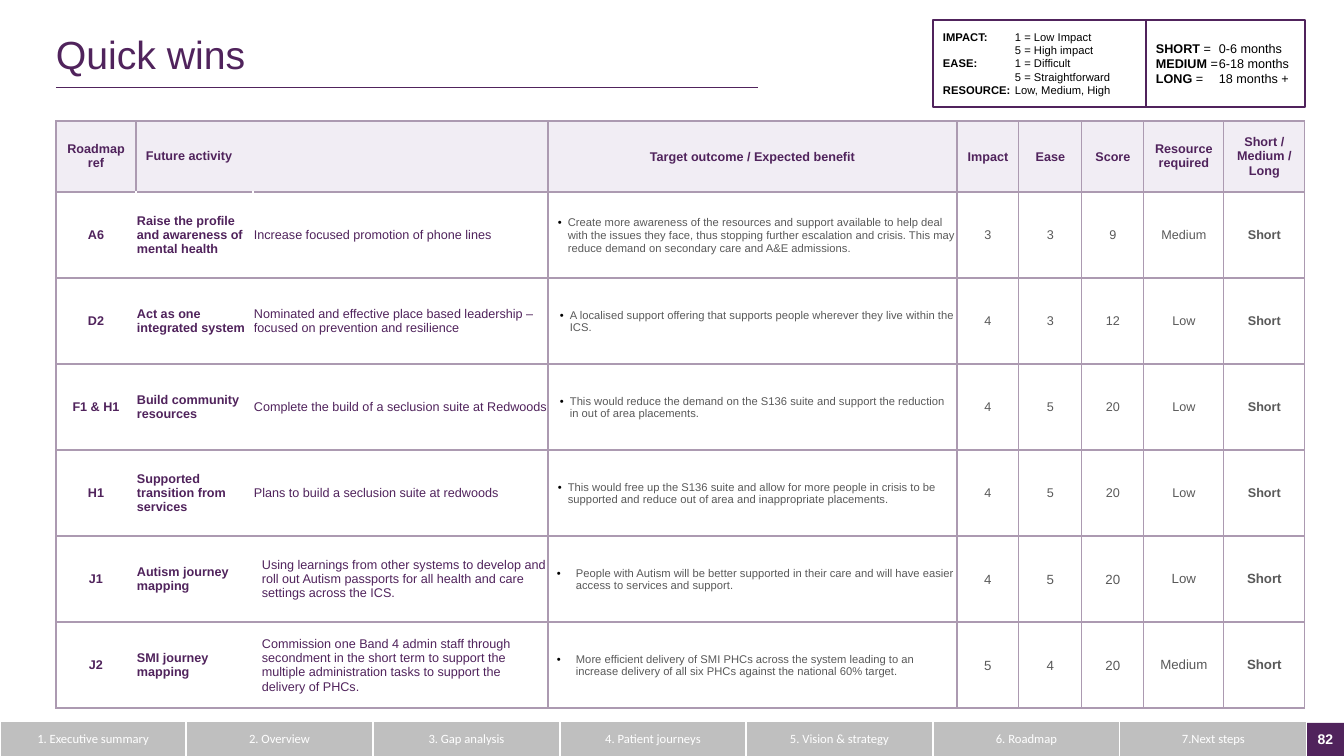
from lxml import etree
from pptx import Presentation
from pptx.dml.color import RGBColor
from pptx.enum.shapes import MSO_CONNECTOR, MSO_SHAPE
from pptx.enum.text import MSO_ANCHOR, PP_ALIGN
from pptx.oxml.ns import qn
from pptx.util import Emu, Pt

RECT = MSO_SHAPE.RECTANGLE
STRAIGHT = MSO_CONNECTOR.STRAIGHT
MIDDLE = MSO_ANCHOR.MIDDLE
LEFT, CENTER = PP_ALIGN.LEFT, PP_ALIGN.CENTER

PURPLE = RGBColor(0x50, 0x23, 0x5C)
MAUVE = RGBColor(0xAC, 0x9A, 0xB1)
LILAC = RGBColor(0xF1, 0xED, 0xF4)
SILVER = RGBColor(0xBF, 0xBF, 0xBF)
GREY = RGBColor(0x59, 0x59, 0x59)
BLACK = RGBColor(0x00, 0x00, 0x00)
WHITE = RGBColor(0xFF, 0xFF, 0xFF)

TIGHT = (1, 1, 1, 0)
WIDE = (10, 5, 10, 5)
INDENTED = (9, 1, 1, 0)

NAV = ["1. Executive summary", "2. Overview", "3. Gap analysis", "4. Patient journeys",
       "5. Vision & strategy", "6. Roadmap", "7.Next steps"]
NAV_WIDTH = 1307

COLUMNS = [80, 117, 295, 409, 62, 63, 62, 80, 81]
HEADERS = ["Roadmap ref", "Future activity", "", "Target outcome / Expected benefit",
           "Impact", "Ease", "Score", "Resource required", "Short /\nMedium /\vLong"]
ROWS = [
    ("A6", "Raise the profile and awareness of mental health",
     "Increase focused promotion of phone lines",
     "Create more awareness of the resources and support available to help deal with the "
     "issues they face, thus stopping further escalation and crisis. This may reduce demand "
     "on secondary care and A&E admissions.",
     "3", "3", "9", "Medium", "Short"),
    ("D2", "Act as one integrated system",
     "Nominated and effective place based leadership – focused on prevention and resilience",
     "A localised support offering that supports people wherever they live within the ICS.",
     "4", "3", "12", "Low", "Short"),
    ("F1 & H1", "Build community resources",
     "Complete the build of a seclusion suite at Redwoods",
     "This would reduce the demand on the S136 suite and support the reduction in out of "
     "area placements.",
     "4", "5", "20", "Low", "Short"),
    ("H1", "Supported transition from services",
     "Plans to build a seclusion suite at redwoods",
     "This would free up the S136 suite and allow for more people in crisis to be supported "
     "and reduce out of area and inappropriate placements.",
     "4", "5", "20", "Low", "Short"),
    ("J1", "Autism journey mapping",
     "Using learnings from other systems to develop and roll out Autism passports for all "
     "health and care settings across the ICS.",
     "People with Autism will be better supported in their care and will have easier access "
     "to services and support.",
     "4", "5", "20", "Low", "Short"),
    ("J2", "SMI journey mapping",
     "Commission one Band 4 admin staff through secondment in the short term to support the "
     "multiple administration tasks to support the delivery of PHCs.",
     "More efficient delivery of SMI PHCs across the system leading to an increase delivery "
     "of all six PHCs against the national 60% target.",
     "5", "4", "20", "Medium", "Short"),
]
BULLETS = [(11, 10), (13, 10), (13, 10), (11, 10), (19, 19), (19, 19)]

SCALES = [("IMPACT:", "\t1 = Low Impact\n\t5 = High impact"),
          ("EASE:", "\t1 = Difficult\n\t5 = Straightforward"),
          ("RESOURCE:", "\tLow, Medium, High")]
TERMS = [("SHORT", " =\t0-6 months"), ("MEDIUM", " =\t6-18 months"), ("LONG", " =\t18 months +")]


def px(n):
    return Emu(round(n * 914400 / 100.8))


class Deck:
    """Draws styled elements on the current slide, with lengths in px."""

    def __init__(self, font):
        self.font = font
        self.prs = Presentation()
        self.prs.slide_width, self.prs.slide_height = px(1344), px(756)
        self.slide = self.prs.slides.add_slide(self.prs.slide_layouts[6])

    def style(self, r, size, color, bold=False, font=None):
        r.font.name = font or self.font
        r.font.size = Pt(size)
        r.font.bold = bold
        r.font.color.rgb = color

    def text(self, tf, text, size, color, bold=False, align=LEFT, font=None):
        tf.text = text
        for p in tf.paragraphs:
            p.alignment = align
            for r in p.runs:
                self.style(r, size, color, bold, font)

    def frame(self, sp, insets):
        tf = sp.text_frame
        tf.word_wrap = True
        tf.vertical_anchor = MIDDLE
        tf.margin_left, tf.margin_top, tf.margin_right, tf.margin_bottom = map(px, insets)
        return tf

    def title(self, box, text):
        tf = self.frame(self.slide.shapes.add_textbox(*map(px, box)), (0, 0, 0, 0))
        self.text(tf, text, 28, PURPLE)
        tf.paragraphs[0].line_spacing = 0.9

    def rect(self, box, fill, line=None):
        sp = self.slide.shapes.add_shape(RECT, *map(px, box))
        sp.shadow.inherit = False
        sp.fill.solid()
        sp.fill.fore_color.rgb = fill
        if line is None:
            sp.line.fill.background()
        else:
            sp.line.color.rgb = line
            sp.line.width = Pt(1)
        return sp

    def page_number(self, box, text):
        tf = self.frame(self.rect(box, PURPLE), (0, 0, 0, 2))
        self.text(tf, text, 10, WHITE, True, CENTER)

    def rule(self, x1, y1, x2, y2):
        c = self.slide.shapes.add_connector(STRAIGHT, px(x1), px(y1), px(x2), px(y2))
        c.line.color.rgb = PURPLE
        c.line.width = Pt(0.5)
        etree.SubElement(c._element.spPr, qn("a:effectLst"))

    def legend(self, box, entries, size, tab):
        tf = self.frame(self.rect(box, WHITE, PURPLE), WIDE)
        for i, (label, value) in enumerate(entries):
            p = tf.add_paragraph() if i else tf.paragraphs[0]
            p.alignment = LEFT
            tabs = etree.SubElement(p._p.get_or_add_pPr(), qn("a:tabLst"))
            etree.SubElement(tabs, qn("a:tab"), pos=str(px(tab)), algn="l")
            for j, text in enumerate([label] + value.split("\n")):
                if j > 1:
                    p.add_line_break()
                r = p.add_run()
                r.text = text
                self.style(r, size, BLACK, j == 0)

    def table(self, x, y, widths, heights):
        gf = self.slide.shapes.add_table(len(heights), len(widths), px(x), px(y),
                                         px(sum(widths)), px(sum(heights)))
        tbl = gf.table
        tbl.first_row = tbl.horz_banding = False
        for col, width in zip(tbl.columns, widths):
            col.width = px(width)
        for row, height in zip(tbl.rows, heights):
            row.height = px(height)
        return tbl

    def cell(self, cell, text, insets, borders, fill=None, **look):
        cell.vertical_anchor = MIDDLE
        cell.margin_left, cell.margin_top, cell.margin_right, cell.margin_bottom = map(px, insets)
        tcPr = cell._tc.get_or_add_tcPr()
        for side, color in zip("LRTB", borders):
            ln = etree.SubElement(tcPr, qn("a:ln" + side), w=str(Pt(1)))
            solid = etree.SubElement(ln, qn("a:solidFill"))
            etree.SubElement(solid, qn("a:srgbClr"), val=str(color))
        if fill is None:
            cell.fill.background()
        else:
            cell.fill.solid()
            cell.fill.fore_color.rgb = fill
        self.text(cell.text_frame, text, **look)

    def bullet(self, p, margin, hang):
        pPr = p._p.get_or_add_pPr()
        pPr.set("marL", str(px(margin)))
        pPr.set("indent", str(-px(hang)))
        color = etree.SubElement(pPr, qn("a:buClr"))
        etree.SubElement(color, qn("a:srgbClr"), val=str(BLACK))
        etree.SubElement(pPr, qn("a:buFont"), typeface=self.font)
        etree.SubElement(pPr, qn("a:buChar"), char="•")

    def navigation(self, y, height):
        n = len(NAV)
        widths = [NAV_WIDTH * (i + 1) // n - NAV_WIDTH * i // n for i in range(n)]
        tbl = self.table(0, y, widths, [height])
        for i, text in enumerate(NAV):
            self.cell(tbl.cell(0, i), text, (13, 7, 13, 7), (WHITE, WHITE, SILVER, SILVER), SILVER,
                      size=9, color=WHITE, align=CENTER, font="Calibri")

    def quick_wins(self, x, y):
        tbl = self.table(x, y, COLUMNS, [71] + [86] * len(ROWS))
        for c, text in enumerate(HEADERS):
            self.cell(tbl.cell(0, c), text, TIGHT if 3 <= c <= 6 else WIDE, [MAUVE] * 4, LILAC,
                      size=9, color=PURPLE, bold=True, align=LEFT if c == 1 else CENTER)
        tbl.cell(0, 1).merge(tbl.cell(0, 2))
        for i, row in enumerate(ROWS):
            journey = row[0].startswith("J")
            for c, text in enumerate(row):
                size = 8 if c == 3 else 9.5 if journey and c > 3 else 9
                insets = WIDE if c in (0, 7, 8) else TIGHT
                if c == 3 or (journey and c == 2):
                    insets = INDENTED
                borders = (WHITE if c in (1, 2) else MAUVE, WHITE if c < 2 else MAUVE, MAUVE, MAUVE)
                self.cell(tbl.cell(i + 1, c), text, insets, borders, size=size,
                          color=PURPLE if c < 3 else GREY, bold=c in (0, 1, 8),
                          align=LEFT if c in (1, 2, 3) else CENTER)
            self.bullet(tbl.cell(i + 1, 3).text_frame.paragraphs[0], *BULLETS[i])


def main():
    deck = Deck("Arial")
    deck.page_number((NAV_WIDTH, 723, 37, 33), "82")
    deck.rule(56, 87, 758, 87)
    deck.title((56, 33, 863, 47), "Quick wins")
    deck.legend((933, 20, 213, 87), SCALES, 8, 72)
    deck.legend((1146, 20, 159, 87), TERMS, 9, 63)
    deck.navigation(723, 33)
    deck.quick_wins(56, 121)
    deck.prs.save("out.pptx")


if __name__ == "__main__":
    main()
